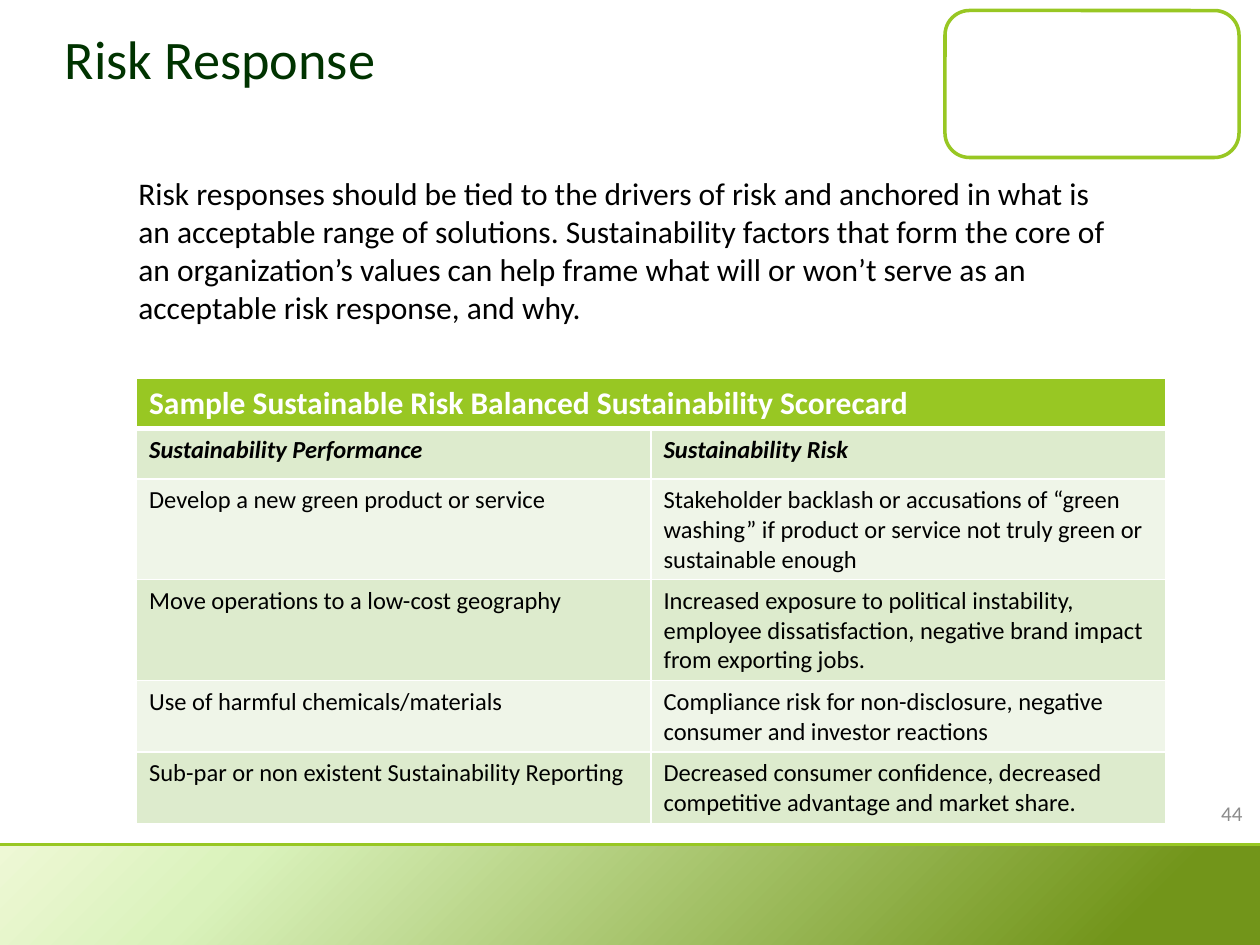
"""Build the Risk Response slide with its sustainability scorecard table."""
from dataclasses import dataclass

from lxml import etree
from pptx import Presentation
from pptx.dml.color import RGBColor
from pptx.enum.shapes import MSO_CONNECTOR, MSO_SHAPE
from pptx.enum.text import MSO_ANCHOR, PP_ALIGN
from pptx.oxml import parse_xml
from pptx.oxml.ns import nsdecls, qn
from pptx.util import Inches, Pt

ROUNDED, RECTANGLE = MSO_SHAPE.ROUNDED_RECTANGLE, MSO_SHAPE.RECTANGLE
STRAIGHT = MSO_CONNECTOR.STRAIGHT
TOP, MIDDLE = MSO_ANCHOR.TOP, MSO_ANCHOR.MIDDLE
LEFT, RIGHT = PP_ALIGN.LEFT, PP_ALIGN.RIGHT


@dataclass(frozen=True)
class Theme:
    font: str = "Calibri"
    accent: str = "98C723"
    title: str = "003300"
    number: str = "8C8C8C"
    text: str = "000000"
    white: str = "FFFFFF"
    bands: tuple = ("DDEBCD", "EFF5E8")
    footer: tuple = ((0, "EEF8D5"), (19, "DAF2BC"), (89, "72951A"))
    title_size: float = 31
    body_size: float = 18
    cell_size: float = 14
    number_size: float = 12


def write(frame, text, size, color, bold=None, italic=None, align=LEFT):
    frame.word_wrap = True
    para = frame.paragraphs[0]
    para.alignment = align
    span = para.add_run()
    span.text = text
    font = span.font
    font.name, font.size, font.bold, font.italic = theme.font, Pt(size), bold, italic
    font.color.rgb = RGBColor.from_string(color)


def style_cell(cell, fill, bottom=1):
    cell.fill.solid()
    cell.fill.fore_color.rgb = RGBColor.from_string(fill)
    properties = cell._tc.get_or_add_tcPr()
    for index, side in enumerate(("lnL", "lnR", "lnT", "lnB")):
        width = Pt(bottom if side == "lnB" else 1)
        properties.insert(index, parse_xml(
            f'<a:{side} {nsdecls("a")} w="{width}"><a:solidFill>'
            f'<a:srgbClr val="{theme.white}"/></a:solidFill></a:{side}>'))


theme = Theme()
deck = Presentation()
deck.slide_width, deck.slide_height = Inches(10), Inches(7.5)
UNIT = deck.slide_width // 120
page = deck.slides.add_slide(deck.slide_layouts[6])
shapes = page.shapes
accent = RGBColor.from_string(theme.accent)

frame_box = shapes.add_shape(ROUNDED, 90 * UNIT, UNIT, 28 * UNIT, 14 * UNIT)
frame_box.shadow.inherit = False
frame_box.fill.solid()
frame_box.fill.fore_color.rgb = RGBColor.from_string(theme.white)
frame_box.line.color.rgb = accent
frame_box.line.width = Pt(2)

footer = shapes.add_shape(RECTANGLE, 0, int(80.5 * UNIT), 120 * UNIT, int(9.8 * UNIT))
footer.shadow.inherit = False
footer.line.fill.background()
footer.fill.gradient()
footer.fill.gradient_angle = 315
stops = footer._element.spPr.find(qn("a:gradFill")).find(qn("a:gsLst"))
for stop in list(stops):
    stops.remove(stop)
for position, color in theme.footer:
    stop = etree.SubElement(stops, qn("a:gs"), pos=str(position * 1000))
    etree.SubElement(stop, qn("a:srgbClr"), val=color)

rule_top = int(80.4 * UNIT)
rule = shapes.add_connector(STRAIGHT, 0, rule_top, 120 * UNIT, rule_top)
rule.line.color.rgb = accent
rule.line.width = Pt(1.5)
etree.SubElement(rule._element.spPr, qn("a:effectLst"))

BODY = (
    "Risk responses should be tied to the drivers of risk and anchored in what is "
    "an acceptable range of solutions. Sustainability factors that form the core of "
    "an organization’s values can help frame what will or won’t serve as an "
    "acceptable risk response, and why."
)
TEXTS = (
    ((5, 0, 84, 11), "Risk Response", theme.title_size, theme.title, MIDDLE, LEFT),
    ((91.5, 75, 28, 4.8), "44", theme.number_size, theme.number, MIDDLE, RIGHT),
    ((12, 16, 96, 19.4), BODY, theme.body_size, theme.text, TOP, LEFT),
)
for place, text, size, color, anchor, align in TEXTS:
    box = shapes.add_textbox(*(int(value * UNIT) for value in place))
    box.text_frame.vertical_anchor = anchor
    write(box.text_frame, text, size, color, align=align)

HEADING = "Sample Sustainable Risk Balanced Sustainability Scorecard"
ROWS = (
    (4.8, "Sustainability Performance", "Sustainability Risk"),
    (9.6, "Develop a new green product or service",
     "Stakeholder backlash or accusations of “green washing” if product or service "
     "not truly green or sustainable enough"),
    (9.6, "Move operations to a low-cost geography",
     "Increased exposure to political instability, employee dissatisfaction, "
     "negative brand impact from exporting jobs."),
    (6.8, "Use of harmful chemicals/materials",
     "Compliance risk for non-disclosure, negative consumer and investor reactions"),
    (6.8, "Sub-par or non existent Sustainability Reporting",
     "Decreased consumer confidence, decreased competitive advantage and market share."),
)
scorecard = shapes.add_table(
    len(ROWS) + 1, 2, 13 * UNIT, 36 * UNIT, 98 * UNIT, int(42.4 * UNIT)).table
scorecard.rows[0].height = int(4.8 * UNIT)
for cell in scorecard.rows[0].cells:
    style_cell(cell, theme.accent, bottom=3)
scorecard.cell(0, 0).merge(scorecard.cell(0, 1))
write(scorecard.cell(0, 0).text_frame, HEADING, theme.body_size, theme.white, bold=True)

for index, (height, *texts) in enumerate(ROWS):
    row = scorecard.rows[index + 1]
    row.height = int(height * UNIT)
    is_label = index == 0
    for cell, text in zip(row.cells, texts):
        style_cell(cell, theme.bands[index % 2])
        write(cell.text_frame, text, theme.cell_size, theme.text, is_label, is_label)

deck.save("out.pptx")
